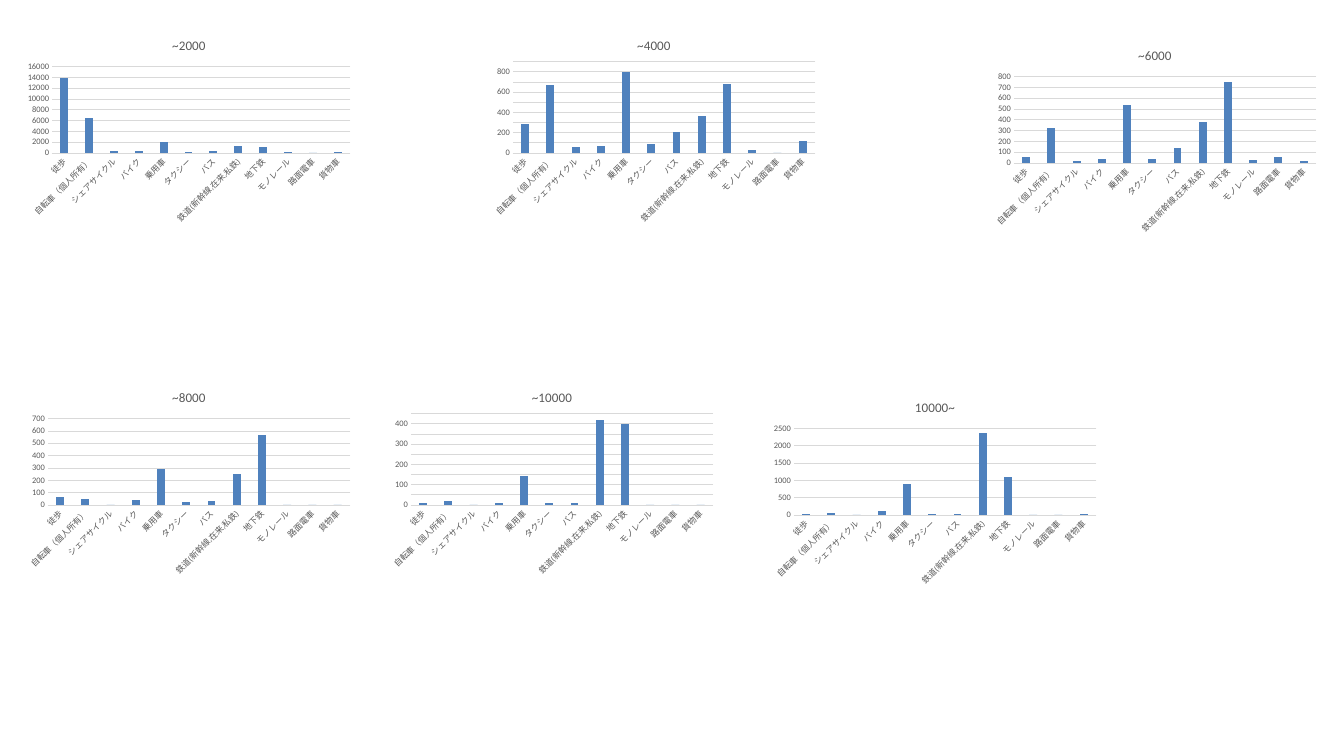
import pptx
import pptx.chart.data
import pptx.dml.color
import pptx.enum.chart
import pptx.util

PX = 914400 / 67.2
FONT = "Calibri"
BAR_BLUE = pptx.dml.color.RGBColor(0x4F, 0x81, 0xBD)
TEXT_GREY = pptx.dml.color.RGBColor(0x59, 0x59, 0x59)
LINE_GREY = pptx.dml.color.RGBColor(0xD9, 0xD9, 0xD9)
BLACK = pptx.dml.color.RGBColor(0, 0, 0)

CHART_WIDTH, CHART_HEIGHT = 336, 202
MODES = ["徒歩", "自転車（個人所有）", "シェアサイクル", "バイク", "乗用車", "タクシー",
         "バス", "鉄道(新幹線,在来,私鉄)", "地下鉄", "モノレール", "路面電車", "貨物車"]

# Distance band, left and top in px, axis maximum, one value per transport mode
CHARTS = [
    ("~2000", 21, 26, 16000, [13800, 6500, 300, 300, 2000, 100, 400, 1300, 1100, 100, 0, 100]),
    ("~4000", 486, 26, 900, [280, 670, 60, 70, 800, 90, 210, 360, 680, 30, 0, 120]),
    ("~6000", 987, 36, 800, [50, 320, 20, 40, 540, 40, 140, 380, 750, 30, 50, 20]),
    ("~8000", 21, 378, 700, [60, 50, 0, 40, 290, 20, 30, 250, 570, 0, 0, 0]),
    ("~10000", 384, 378, 450, [10, 20, 0, 10, 140, 10, 10, 420, 400, 0, 0, 0]),
    ("10000~", 767, 388, 2500, [20, 40, 0, 100, 900, 20, 10, 2360, 1100, 0, 0, 20]),
]


def px(length):
    return pptx.util.Emu(round(length * PX))


def write_text(text_frame, text, *, size, color, bold=False):
    paragraph = text_frame.paragraphs[0]
    run = paragraph.add_run()
    run.text = text
    run.font.name = FONT
    run.font.size = pptx.util.Pt(size)
    run.font.bold = bold
    run.font.color.rgb = color


presentation = pptx.Presentation()
presentation.slide_width = px(1344)
presentation.slide_height = px(756)
slide = presentation.slides.add_slide(presentation.slide_layouts[6])

for band, left, top, maximum, counts in CHARTS:
    # Chart and title
    chart_data = pptx.chart.data.CategoryChartData()
    chart_data.categories = MODES
    chart_data.add_series(band, counts)
    chart = slide.shapes.add_chart(
        pptx.enum.chart.XL_CHART_TYPE.COLUMN_CLUSTERED,
        px(left), px(top), px(CHART_WIDTH), px(CHART_HEIGHT), chart_data).chart
    chart.has_legend = False
    chart.font.name = FONT
    chart.font.size = pptx.util.Pt(10)
    chart.font.color.rgb = BLACK
    chart.has_title = True
    chart.chart_title.include_in_layout = False
    write_text(chart.chart_title.text_frame, band, size=14, color=TEXT_GREY)

    # Columns
    plot = chart.plots[0]
    plot.gap_width = 219
    plot.overlap = -27
    plot.vary_by_categories = False
    fill = plot.series[0].format.fill
    fill.solid()
    fill.fore_color.rgb = BAR_BLUE

    # Axes
    for axis in (chart.category_axis, chart.value_axis):
        axis.major_tick_mark = pptx.enum.chart.XL_TICK_MARK.NONE
        axis.minor_tick_mark = pptx.enum.chart.XL_TICK_MARK.NONE
        axis.tick_labels.font.name = FONT
        axis.tick_labels.font.size = pptx.util.Pt(9)
        axis.tick_labels.font.color.rgb = TEXT_GREY
    chart.value_axis.minimum_scale = 0
    chart.value_axis.maximum_scale = maximum
    chart.value_axis.has_major_gridlines = True
    chart.value_axis.format.line.fill.background()
    for line in (chart.category_axis.format.line,
                 chart.value_axis.major_gridlines.format.line):
        line.color.rgb = LINE_GREY
        line.width = pptx.util.Pt(0.75)

    # Category labels slant upwards at 45 degrees
    label_body = chart.category_axis._element.xpath("./c:txPr/a:bodyPr")[0]
    label_body.set("rot", "-2700000")
    label_body.set("vert", "horz")

presentation.save("out.pptx")
